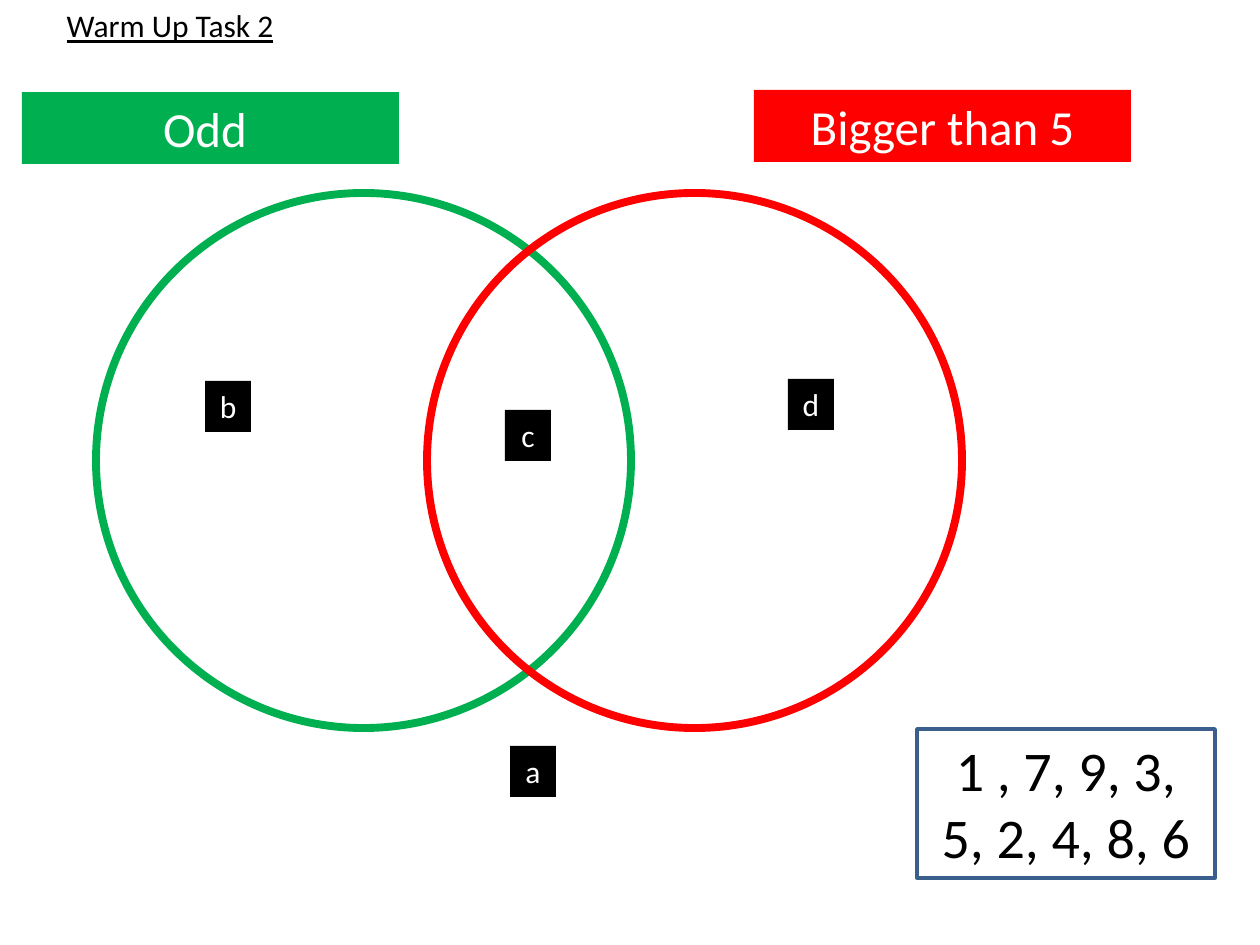
from pptx import Presentation
from pptx.dml.color import RGBColor
from pptx.enum.shapes import MSO_SHAPE as Preset
from pptx.enum.text import MSO_ANCHOR as Anchor, MSO_AUTO_SIZE as AutoSize, PP_ALIGN as Align
from pptx.util import Emu, Pt

PX = 914400 / 126
GREEN, RED, BLACK, WHITE, BLUE = "00B050", "FF0000", "000000", "FFFFFF", "3A5F8C"

presentation = Presentation()
presentation.slide_width, presentation.slide_height = Emu(9144000), Emu(6858000)
slide = presentation.slides.add_slide(presentation.slide_layouts[5])


def add_box(preset, box, fill=None, line=None, line_width=0):
    shape = slide.shapes.add_shape(preset, *(Emu(round(v * PX)) for v in box))
    shape.shadow.inherit = False
    if fill:
        shape.fill.solid()
        shape.fill.fore_color.rgb = RGBColor.from_string(fill)
    else:
        shape.fill.background()
    if line:
        shape.line.color.rgb = RGBColor.from_string(line)
        shape.line.width = Pt(line_width)
    else:
        shape.line.fill.background()
    return shape


def write(shape, text, size, color, align=Align.CENTER):
    frame = shape.text_frame
    frame.word_wrap = True
    frame.auto_size = AutoSize.NONE
    frame.vertical_anchor = Anchor.TOP
    paragraph = frame.paragraphs[0]
    paragraph.alignment = align
    run = paragraph.add_run()
    run.text = text
    run.font.name = "Calibri"
    run.font.size = Pt(size)
    run.font.color.rgb = RGBColor.from_string(color)
    return run


# Title
title = slide.shapes.title
title.left, title.top, title.width, title.height = (
    Emu(round(v * PX)) for v in (54, 0, 459, 50))
write(title, "Warm Up Task 2", 18, BLACK, Align.LEFT).font.underline = True

# Set names
for text, left, top, color in [("Bigger than 5", 754, 90, RED), ("Odd ", 22, 92, GREEN)]:
    write(add_box(Preset.RECTANGLE, (left, top, 377, 72), color), text, 28, WHITE)

# Venn circles
for left, color in [(96, GREEN), (427, RED)]:
    add_box(Preset.OVAL, (left, 193, 535, 535), line=color, line_width=4.5)

# Region letters
for letter, left, top in [("b", 205, 381), ("d", 788, 379), ("a", 510, 746), ("c", 505, 410)]:
    write(add_box(Preset.RECTANGLE, (left, top, 46, 51), BLACK), letter, 18, WHITE)

# Numbers to sort
numbers_box = (917, 729, 298, 149)
add_box(Preset.RECTANGLE, numbers_box, WHITE, BLUE, 2)
numbers = slide.shapes.add_textbox(*(Emu(round(v * PX)) for v in numbers_box))
write(numbers, "1 , 7, 9, 3, 5, 2, 4, 8, 6", 32, BLACK)

presentation.save("out.pptx")
